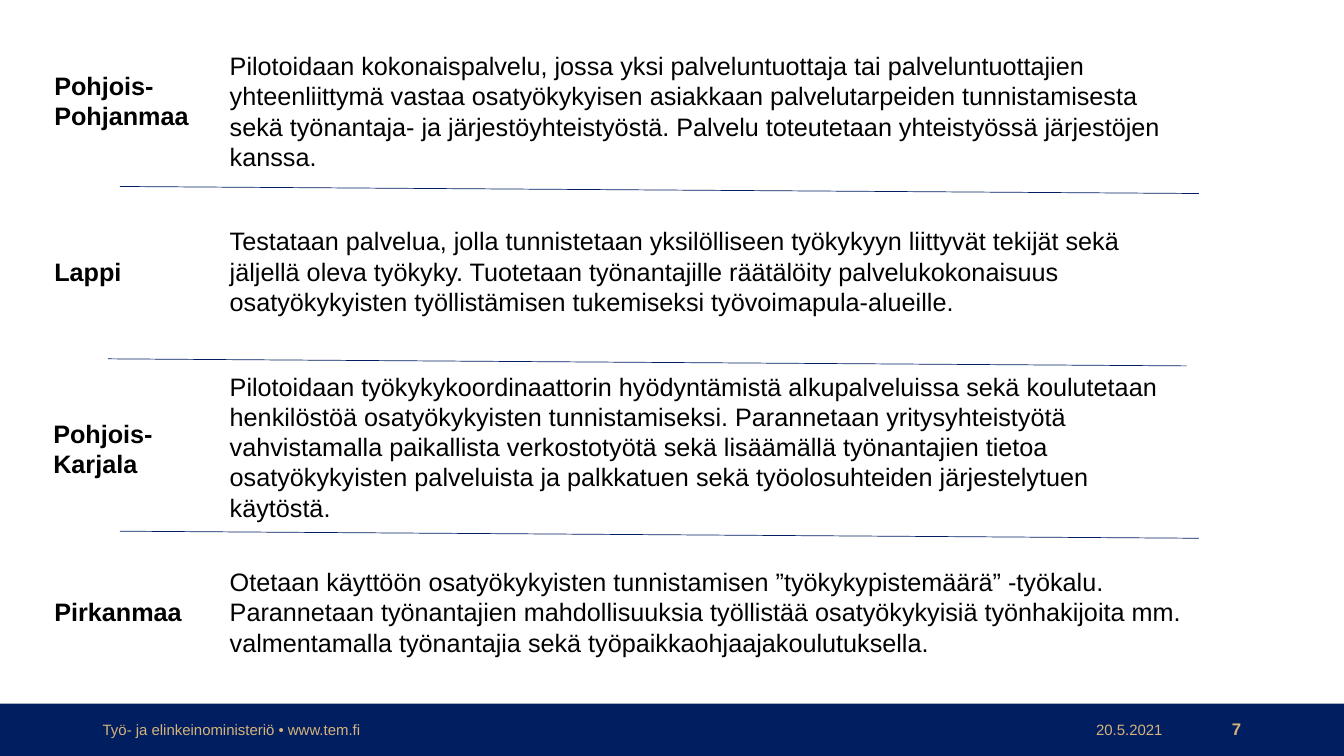
from lxml import etree
from pptx import Presentation
from pptx.dml.color import RGBColor
from pptx.enum.shapes import MSO_CONNECTOR, MSO_SHAPE
from pptx.enum.text import MSO_ANCHOR, MSO_AUTO_SIZE, PP_ALIGN
from pptx.oxml.ns import qn
from pptx.util import Inches, Pt

NAVY = RGBColor(0x00, 0x1E, 0x60)
GOLD = RGBColor(0xD5, 0xB3, 0x7A)
BLACK = RGBColor(0x00, 0x00, 0x00)

REGIONS = [
    (0.44, 0.65, 0.71, ["Pohjois-Pohjanmaa"], 0.45, 1.31,
     "Pilotoidaan kokonaispalvelu, jossa yksi palveluntuottaja tai "
     "palveluntuottajien yhteenliittymä vastaa osatyökykyisen asiakkaan "
     "palvelutarpeiden tunnistamisesta sekä työnantaja- ja "
     "järjestöyhteistyöstä. Palvelu toteutetaan yhteistyössä järjestöjen "
     "kanssa."),
    (0.44, 2.49, 0.4, ["Lappi"], 2.19, 1.01,
     "Testataan palvelua, jolla tunnistetaan yksilölliseen työkykyyn "
     "liittyvät tekijät sekä jäljellä oleva työkyky. Tuotetaan "
     "työnantajille räätälöity palvelukokonaisuus osatyökykyisten "
     "työllistämisen tukemiseksi työvoimapula-alueille."),
    (0.43, 4.1, 0.71, ["Pohjois-", "Karjala"], 3.63, 1.62,
     "Pilotoidaan työkykykoordinaattorin hyödyntämistä alkupalveluissa "
     "sekä koulutetaan henkilöstöä osatyökykyisten tunnistamiseksi. "
     "Parannetaan yritysyhteistyötä vahvistamalla paikallista "
     "verkostotyötä sekä lisäämällä työnantajien tietoa osatyökykyisten "
     "palveluista ja palkkatuen sekä työolosuhteiden järjestelytuen "
     "käytöstä."),
    (0.44, 5.87, 0.4, ["Pirkanmaa"], 5.57, 1.01,
     "Otetaan käyttöön osatyökykyisten tunnistamisen ”työkykypistemäärä” "
     "-työkalu. Parannetaan työnantajien mahdollisuuksia työllistää "
     "osatyökykyisiä työnhakijoita mm. valmentamalla työnantajia sekä "
     "työpaikkaohjaajakoulutuksella."),
]
DIVIDERS = [(1.19, 1.85), (1.07, 3.56), (1.19, 5.27)]
FOOTER = [
    (0.92, 4.49, "Työ- ja elinkeinoministeriö • www.tem.fi",
     {"size": 10.7}),
    (10.6, 1.03, "20.5.2021", {"size": 10.7, "align": PP_ALIGN.RIGHT}),
    (11.63, 0.78, "7", {"size": 12, "bold": True, "align": PP_ALIGN.RIGHT}),
]


def write(p, text, size=18, color=BLACK, bold=False, align=PP_ALIGN.LEFT,
          font="Arial"):
    p.alignment = align
    r = p.add_run()
    r.text = text
    r.font.name = font
    r.font.size = Pt(size)
    r.font.bold = bold
    r.font.color.rgb = color


class RegionSlide:
    def __init__(self, prs):
        self.s = prs.slides.add_slide(prs.slide_layouts[6])

    def bar(self, x, y, w, h, color):
        sp = self.s.shapes.add_shape(MSO_SHAPE.RECTANGLE, Inches(x),
                                     Inches(y), Inches(w), Inches(h))
        sp.shadow.inherit = False
        sp.fill.solid()
        sp.fill.fore_color.rgb = color
        sp.line.fill.background()

    def text(self, x, y, w, h, lines, anchor=MSO_ANCHOR.TOP,
             fit=MSO_AUTO_SIZE.SHAPE_TO_FIT_TEXT, **style):
        sp = self.s.shapes.add_textbox(Inches(x), Inches(y), Inches(w),
                                       Inches(h))
        tf = sp.text_frame
        tf.word_wrap = True
        tf.auto_size = fit
        tf.vertical_anchor = anchor
        for i, line in enumerate(lines):
            p = tf.add_paragraph() if i else tf.paragraphs[0]
            write(p, line, **style)

    def divider(self, x, y, w=10.7, drop=0.07):
        line = self.s.shapes.add_connector(
            MSO_CONNECTOR.STRAIGHT, Inches(x), Inches(y),
            Inches(x + w), Inches(y + drop))
        line.line.color.rgb = NAVY
        line.line.width = Pt(0.5)
        etree.SubElement(line._element.spPr, qn("a:effectLst"))


def main():
    prs = Presentation()
    prs.slide_width = Inches(13.33)
    prs.slide_height = Inches(7.5)
    slide = RegionSlide(prs)

    slide.bar(0, 6.98, 13.33, 0.52, NAVY)
    for x, w, text, style in FOOTER:
        slide.text(x, 7.12, w, 0.23, [text], anchor=MSO_ANCHOR.MIDDLE,
                   fit=MSO_AUTO_SIZE.NONE, color=GOLD, **style)
    for x, y in DIVIDERS:
        slide.divider(x, y)
    for x, name_y, name_h, name, body_y, body_h, body in REGIONS:
        slide.text(x, name_y, 2.32, name_h, name, bold=True)
        slide.text(2.18, body_y, 9.71, body_h, [body])

    prs.save("out.pptx")


if __name__ == "__main__":
    main()
